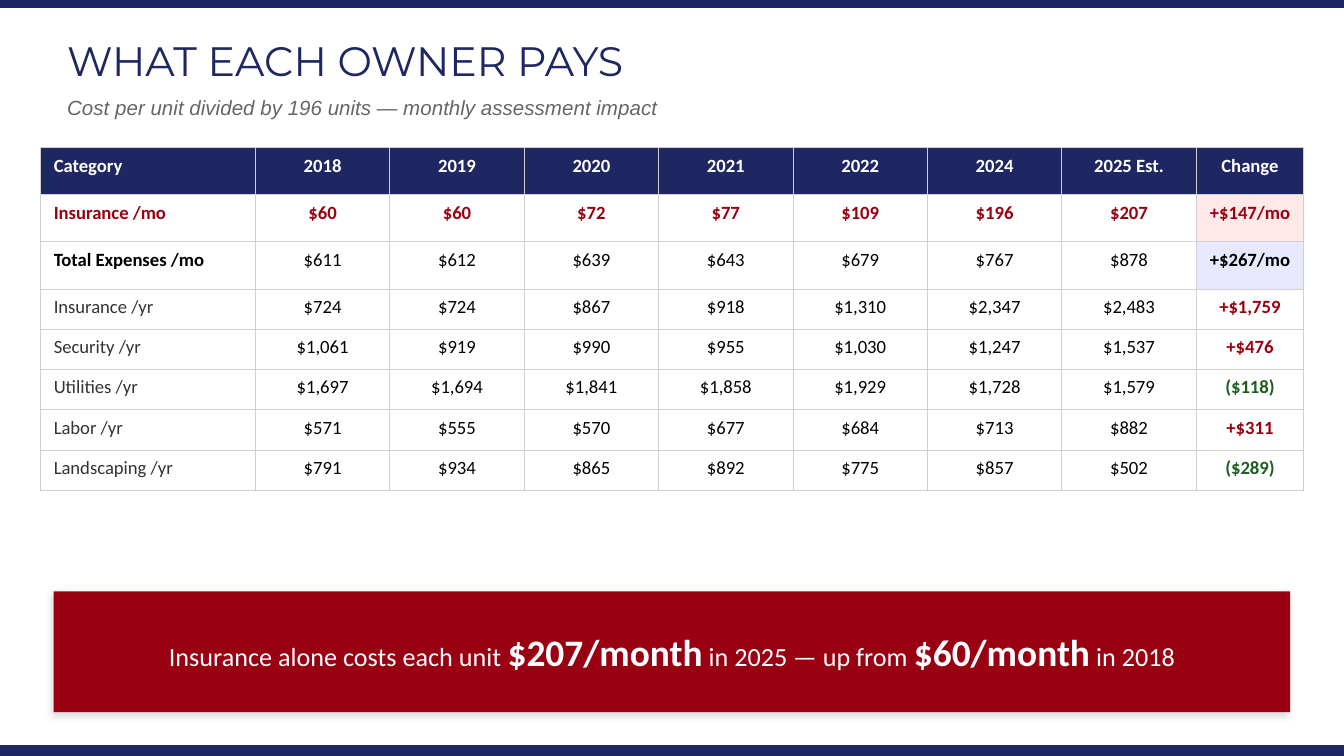
from lxml.etree import SubElement
from pptx import Presentation
from pptx.dml.color import RGBColor
from pptx.enum.shapes import MSO_SHAPE
from pptx.enum.text import MSO_ANCHOR, PP_ALIGN
from pptx.oxml import parse_xml
from pptx.oxml.ns import nsdecls, qn
from pptx.util import Inches, Pt

COLORS = {
    "navy": "1E2761", "red": "990011", "green": "1B5E20", "white": "FFFFFF",
    "black": "000000", "dark": "333333", "gray": "666666", "border": "D0D0D0",
    "pink": "FFE8E8", "lavender": "E8E8FF",
}
TITLE = "WHAT EACH OWNER PAYS"
SUBTITLE = "Cost per unit divided by 196 units — monthly assessment impact"
ROWS = [
    ("Category", "2018", "2019", "2020", "2021", "2022", "2024", "2025 Est.", "Change"),
    ("Insurance /mo", "$60", "$60", "$72", "$77", "$109", "$196", "$207", "+$147/mo"),
    ("Total Expenses /mo", "$611", "$612", "$639", "$643", "$679", "$767", "$878", "+$267/mo"),
    ("Insurance /yr", "$724", "$724", "$867", "$918", "$1,310", "$2,347", "$2,483", "+$1,759"),
    ("Security /yr", "$1,061", "$919", "$990", "$955", "$1,030", "$1,247", "$1,537", "+$476"),
    ("Utilities /yr", "$1,697", "$1,694", "$1,841", "$1,858", "$1,929", "$1,728", "$1,579", "($118)"),
    ("Labor /yr", "$571", "$555", "$570", "$677", "$684", "$713", "$882", "+$311"),
    ("Landscaping /yr", "$791", "$934", "$865", "$892", "$775", "$857", "$502", "($289)"),
]
CALLOUT = [
    ("Insurance alone costs each unit ", False), ("$207/month", True),
    (" in 2025 — up from ", False), ("$60/month", True), (" in 2018", False),
]
SLIDE_WIDTH = 10
SLIDE_HEIGHT = SLIDE_WIDTH * 9 / 16
COLUMN_WIDTHS = [1.6] + [1] * 7 + [0.8]
ROW_HEIGHTS = [0.35] * 3 + [0.3] * 5
HEADER, INSURANCE, TOTAL = range(3)
CHANGE = len(COLUMN_WIDTHS) - 1
TOP_BAR = (0, 0, SLIDE_WIDTH, 0.06)
BOTTOM_BAR = (0, SLIDE_HEIGHT - 0.08, SLIDE_WIDTH, 0.08)
CALLOUT_AREA = (0.4, 4.4, 9.2, 0.9)
FORMATS = {
    "title": {"name": "Montserrat", "size": Pt(22), "bold": False},
    "subtitle": {"name": "Arial", "size": Pt(11), "italic": True},
    "cell": {"name": "Calibri", "size": Pt(10)},
    "callout": {"name": "Calibri", "size": Pt(14), "bold": False},
    "amount": {"name": "Calibri", "size": Pt(20), "bold": True},
}
FRAME = {"word_wrap": True, "vertical_anchor": MSO_ANCHOR.MIDDLE}
NO_MARGINS = {f"margin_{side}": 0 for side in ("left", "top", "right", "bottom")}


def set_attributes(target, values):
    for name, value in values.items():
        setattr(target, name, value)


def rgb(color):
    return RGBColor.from_string(COLORS[color])


def add_run(paragraph, text, style, color, **extra):
    run = paragraph.add_run()
    run.text = text
    set_attributes(run.font, {**FORMATS[style], **extra})
    run.font.color.rgb = rgb(color)


def place(shape, area):
    set_attributes(shape, dict(zip(("left", "top", "width", "height"), map(Inches, area))))


def add_rectangle(slide, area, color):
    shape = slide.shapes.add_shape(MSO_SHAPE.RECTANGLE, *map(Inches, area))
    shape.shadow.inherit = False
    shape.fill.solid()
    shape.fill.fore_color.rgb = rgb(color)
    shape.line.fill.background()
    return shape


def add_shadow(shape):
    effects = shape._element.spPr.find(qn("a:effectLst"))
    effects.append(parse_xml(
        f'<a:outerShdw {nsdecls("a")} blurRad="{Pt(4)}" dist="{Pt(2)}" dir="{135 * 60000}" '
        f'algn="bl" rotWithShape="0"><a:srgbClr val="{COLORS["black"]}">'
        '<a:alpha val="15000"/></a:srgbClr></a:outerShdw>'))


def add_borders(cell):
    properties = cell._tc.get_or_add_tcPr()
    for side in ("lnL", "lnR", "lnT", "lnB"):
        line = SubElement(properties, qn(f"a:{side}"), w=str(Pt(0.5)))
        fill = SubElement(line, qn("a:solidFill"))
        SubElement(fill, qn("a:srgbClr"), val=COLORS["border"])


def cell_format(row, column, text):
    if row == HEADER:
        return "white", True, "navy"
    if row == INSURANCE:
        return "red", True, "pink" if column == CHANGE else None
    if row == TOTAL:
        return "black", column in (0, CHANGE), "lavender" if column == CHANGE else None
    if column == CHANGE:
        return "red" if text.startswith("+") else "green", True, None
    return "black" if column else "dark", False, None


def add_cost_table(slide):
    area = (0.3, 1.1, sum(COLUMN_WIDTHS), sum(ROW_HEIGHTS))
    table = slide.shapes.add_table(len(ROWS), len(COLUMN_WIDTHS), *map(Inches, area)).table
    set_attributes(table, {"first_row": False, "horz_banding": False})
    for column, width in zip(table.columns, COLUMN_WIDTHS):
        column.width = Inches(width)
    for row, height in zip(table.rows, ROW_HEIGHTS):
        row.height = Inches(height)
    for row, texts in enumerate(ROWS):
        for column, text in enumerate(texts):
            color, bold, fill = cell_format(row, column, text)
            cell = table.cell(row, column)
            add_borders(cell)
            if fill:
                cell.fill.solid()
                cell.fill.fore_color.rgb = rgb(fill)
            else:
                cell.fill.background()
            paragraph = cell.text_frame.paragraphs[0]
            paragraph.alignment = PP_ALIGN.CENTER if column else PP_ALIGN.LEFT
            add_run(paragraph, text, "cell", color, bold=bold)


def main():
    presentation = Presentation()
    set_attributes(presentation, {
        "slide_width": Inches(SLIDE_WIDTH), "slide_height": Inches(SLIDE_HEIGHT)})
    slide = presentation.slides.add_slide(presentation.slide_layouts[5])

    add_rectangle(slide, TOP_BAR, "navy")
    title = slide.shapes.title
    subtitle = slide.shapes.add_textbox(0, 0, 0, 0)
    headings = [
        (title, (0.5, 0.2, 9, 0.5), TITLE, "title", "navy"),
        (subtitle, (0.5, 0.65, 9, 0.3), SUBTITLE, "subtitle", "gray"),
    ]
    for shape, area, text, style, color in headings:
        place(shape, area)
        set_attributes(shape.text_frame, {**FRAME, **NO_MARGINS})
        paragraph = shape.text_frame.paragraphs[0]
        paragraph.alignment = PP_ALIGN.LEFT
        add_run(paragraph, text, style, color)

    add_cost_table(slide)

    add_shadow(add_rectangle(slide, CALLOUT_AREA, "red"))
    callout = slide.shapes.add_textbox(*map(Inches, CALLOUT_AREA))
    set_attributes(callout.text_frame, FRAME)
    paragraph = callout.text_frame.paragraphs[0]
    paragraph.alignment = PP_ALIGN.CENTER
    for text, is_amount in CALLOUT:
        add_run(paragraph, text, "amount" if is_amount else "callout", "white")
    add_rectangle(slide, BOTTOM_BAR, "navy")

    presentation.save("out.pptx")


if __name__ == "__main__":
    main()
